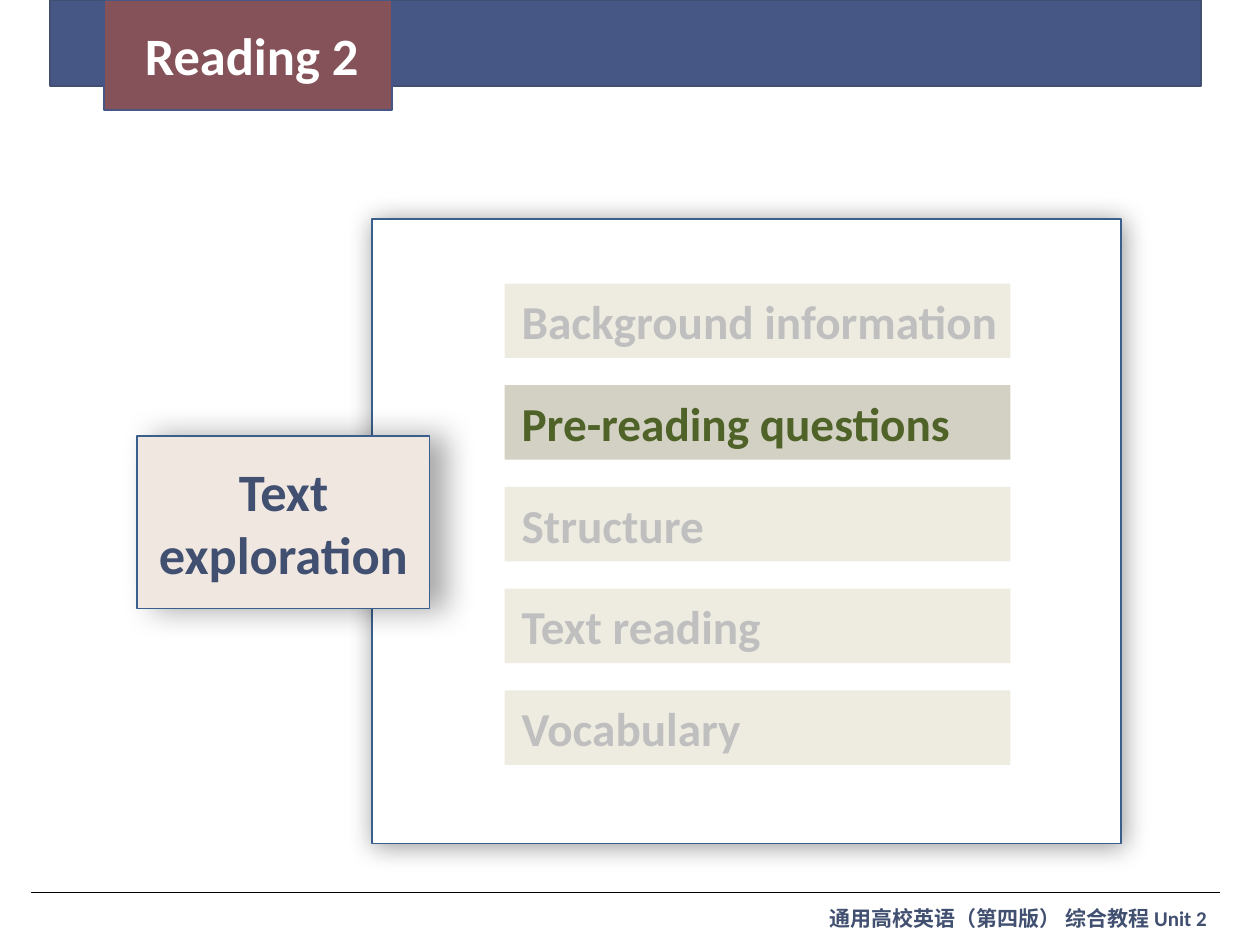
import lxml.etree
import pptx
import pptx.dml.color
import pptx.enum.shapes
import pptx.enum.text
import pptx.oxml.ns
import pptx.util

THEME = {
    "band": "465685", "navy": "415070", "tab": "855259", "edge": "3A5F8C",
    "white": "FFFFFF", "black": "000000", "cream": "F0E7E1",
    "item": "EEECE1", "item text": "BFBFBF",
    "active": "D2D1C3", "active text": "4F6228",
    "title size": 60, "item size": 54, "footer size": 24,
    "font": "Calibri", "footer font": "Arial",
}

presentation = pptx.Presentation()
presentation.slide_width = pptx.util.Inches(20)
presentation.slide_height = pptx.util.Inches(15)
slide = presentation.slides.add_slide(presentation.slide_layouts[6])

# Grid of 20 columns and 15 rows
COLUMN = presentation.slide_width // 20
ROW = presentation.slide_height // 15
qn = pptx.oxml.ns.qn


def add_box(left, top, width, height, fill, line=None, shadow=None):
    """Rectangle in grid units; shadow is opacity %, blur, distance, angle."""
    shape = slide.shapes.add_shape(
        pptx.enum.shapes.MSO_SHAPE.RECTANGLE,
        int(left * COLUMN), int(top * ROW), int(width * COLUMN), int(height * ROW))
    shape.shadow.inherit = False
    shape.fill.solid()
    shape.fill.fore_color.rgb = pptx.dml.color.RGBColor.from_string(THEME[fill])
    if line:
        shape.line.color.rgb = pptx.dml.color.RGBColor.from_string(THEME[line])
        shape.line.width = pptx.util.Pt(2)
    else:
        shape.line.fill.background()
    if shadow:
        opacity, blur, distance, angle = shadow
        effects = shape.element.spPr.find(qn("a:effectLst"))
        outer = lxml.etree.SubElement(
            effects, qn("a:outerShdw"), blurRad=str(pptx.util.Pt(blur)),
            dist=str(pptx.util.Pt(distance)), dir=str(angle * 60000),
            algn="ctr", rotWithShape="0")
        color = lxml.etree.SubElement(outer, qn("a:srgbClr"), val=THEME["black"])
        lxml.etree.SubElement(color, qn("a:alpha"), val=str(opacity * 1000))
    return shape


def write(shape, text, size, color, align="LEFT", anchor="MIDDLE"):
    frame = shape.text_frame
    frame.word_wrap = True
    frame.vertical_anchor = pptx.enum.text.MSO_ANCHOR[anchor]
    frame.text = text
    paragraph = frame.paragraphs[0]
    paragraph.alignment = pptx.enum.text.PP_ALIGN[align]
    font = paragraph.runs[0].font
    font.name = THEME["font"]
    font.size = pptx.util.Pt(THEME[size])
    font.bold = True
    font.color.rgb = pptx.dml.color.RGBColor.from_string(THEME[color])
    return paragraph


# Footer rule and book title
rule = slide.shapes.add_connector(
    pptx.enum.shapes.MSO_CONNECTOR.STRAIGHT,
    int(0.49 * COLUMN), int(14.17 * ROW), int(19.36 * COLUMN), int(14.17 * ROW))
rule.line.color.rgb = pptx.dml.color.RGBColor.from_string(THEME["black"])
rule.line.width = pptx.util.Pt(0.75)
lxml.etree.SubElement(rule.element.spPr, qn("a:effectLst"))

footer = slide.shapes.add_textbox(
    int(13.07 * COLUMN), int(14.32 * ROW), int(6.9 * COLUMN), int(0.5 * ROW))
paragraph = write(footer, "通用高校英语（第四版） 综合教程 ", "footer size", "navy", anchor="TOP")
paragraph.runs[0].font.name = THEME["footer font"]
unit = paragraph.add_run()
unit.text = "Unit 2"
unit.font.name = THEME["font"]
unit.font.size = pptx.util.Pt(THEME["footer size"])
unit.font.bold = True
unit.font.color.rgb = pptx.dml.color.RGBColor.from_string(THEME["navy"])

# Header band with its tab
add_box(0.79, 0, 18.27, 1.36, "band", "navy")
add_box(1.65, 0, 4.57, 1.75, "tab", "band")
heading = slide.shapes.add_textbox(
    int(2.2 * COLUMN), int(0.32 * ROW), int(4.57 * COLUMN), int(1.11 * ROW))
write(heading, "Reading 2", "title size", "white", anchor="TOP")

# Panel and section label
add_box(5.91, 3.48, 11.89, 9.91, "white", "edge", (40, 29, 3, 45))
section = add_box(2.18, 6.92, 4.64, 2.74, "cream", "edge", (34, 35, 18, 0))
write(section, "Text exploration", "title size", "navy", "CENTER")

# Menu of steps, the current one highlighted
steps = ["Background information", "Pre-reading questions", "Structure",
         "Text reading", "Vocabulary"]
current = "Pre-reading questions"
for index, step in enumerate(steps):
    style = "active" if step == current else "item"
    bar = add_box(8.01, 4.5 + index * 1.615, 8.03, 1.18, style)
    write(bar, step, "item size", style + " text")
    bar.text_frame.margin_left = int(0.27 * COLUMN)

presentation.save("out.pptx")
